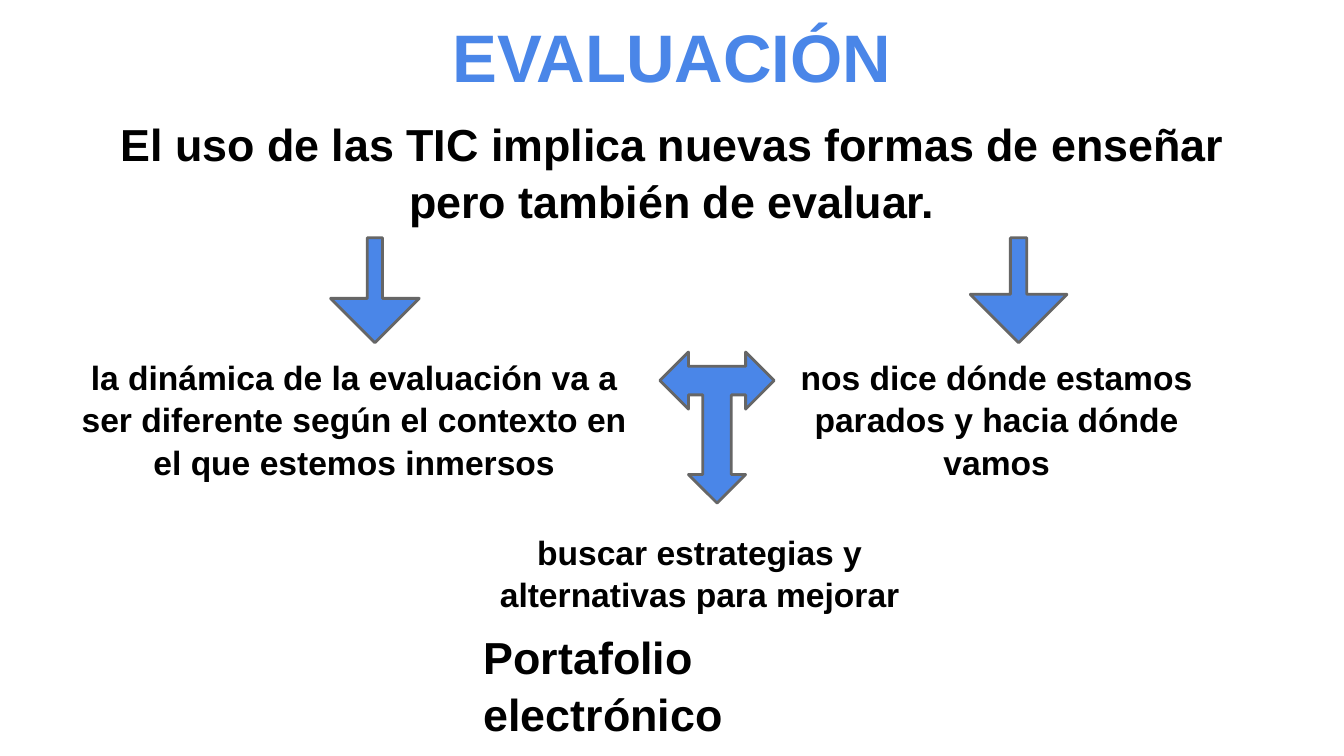
"""Build the EVALUACIÓN slide with its arrows and captions."""
from dataclasses import dataclass

from pptx import Presentation
from pptx.dml.color import RGBColor
from pptx.enum import shapes, text
from pptx.util import Pt

COLORS = {"blue": "4A86E8", "gray": "666666", "black": "000000", "white": "FFFFFF"}
FONT = "Arial"
Box = tuple[float, float, float, float]


@dataclass
class Caption:
    words: str
    box: Box
    size: float = 18
    align: text.PP_ALIGN = text.PP_ALIGN.CENTER
    inset: float = 7.2


@dataclass
class Arrow:
    kind: shapes.MSO_SHAPE
    box: Box
    adjustments: tuple[float, ...] = ()
    rotation: float = 0


CAPTIONS = [
    Caption("El uso de las TIC implica nuevas formas de enseñar pero también de evaluar.",
            (36, 54, 648, 72.7), size=24),
    Caption("la dinámica de la evaluación va a ser diferente según el contexto en el que "
            "estemos inmersos", (28.1, 182.9, 323.3, 80.6)),
    Caption("nos dice dónde estamos parados y hacia dónde vamos", (416.9, 182.9, 234, 92.9)),
    Caption("Portafolio electrónico", (252, 332.6, 241.2, 53.3), size=24,
            align=text.PP_ALIGN.LEFT, inset=3.6),
    Caption("buscar estrategias y alternativas para mejorar", (257.8, 276.5, 234, 55.4)),
]

ARROWS = [
    Arrow(shapes.MSO_SHAPE.DOWN_ARROW, (177.1, 127.4, 47.5, 56.2), (0.17, 0.5)),
    Arrow(shapes.MSO_SHAPE.DOWN_ARROW, (519.8, 127.4, 51.8, 56.2), (0.17, 0.5)),
    Arrow(shapes.MSO_SHAPE.LEFT_RIGHT_UP_ARROW, (353.5, 188.6, 61.2, 80.9),
          (0.25, 0.25, 0.25), 180),
]


def rgb(name: str) -> RGBColor:
    """Look up a palette colour."""
    return RGBColor.from_string(COLORS[name])


def write(sp, words: str, size: float, color: str, align: text.PP_ALIGN,
          anchor: text.MSO_ANCHOR, inset: float = 7.2, spacing: float = 1.05) -> None:
    """Fill a shape with one bold, wrapped paragraph."""
    tf = sp.text_frame
    tf.word_wrap = True
    tf.auto_size = text.MSO_AUTO_SIZE.NONE
    tf.vertical_anchor = anchor
    tf.margin_left = tf.margin_right = Pt(7.2)
    tf.margin_top = tf.margin_bottom = Pt(inset)
    p = tf.paragraphs[0]
    p.text = words
    p.alignment = align
    p.line_spacing = spacing
    p.font.name, p.font.size, p.font.bold = FONT, Pt(size), True
    p.font.color.rgb = rgb(color)


def add_title(s, words: str, box: Box) -> None:
    """Place and format the title placeholder."""
    sp = s.shapes.title
    sp.left, sp.top, sp.width, sp.height = map(Pt, box)
    write(sp, words, 36, "blue", text.PP_ALIGN.CENTER, text.MSO_ANCHOR.BOTTOM, spacing=1)


def add_caption(s, c: Caption) -> None:
    """Add a black text box."""
    sp = s.shapes.add_textbox(*map(Pt, c.box))
    write(sp, c.words, c.size, "black", c.align, text.MSO_ANCHOR.TOP, c.inset)


def add_arrow(s, a: Arrow) -> None:
    """Add a blue block arrow with a gray outline."""
    sp = s.shapes.add_shape(a.kind, *map(Pt, a.box))
    sp.shadow.inherit = False
    sp.rotation = a.rotation
    for i, value in enumerate(a.adjustments):
        sp.adjustments[i] = value
    sp.fill.solid()
    sp.fill.fore_color.rgb = rgb("blue")
    sp.line.color.rgb = rgb("gray")
    sp.line.width = Pt(1.5)


def main() -> None:
    """Assemble and save the slide."""
    prs = Presentation()
    prs.slide_width, prs.slide_height = Pt(720), Pt(405)
    s = prs.slides.add_slide(prs.slide_layouts[5])
    s.background.fill.solid()
    s.background.fill.fore_color.rgb = rgb("white")
    add_title(s, "EVALUACIÓN", (36, 2.2, 648, 56.2))
    for caption in CAPTIONS:
        add_caption(s, caption)
    for arrow in ARROWS:
        add_arrow(s, arrow)
    prs.save("out.pptx")


if __name__ == "__main__":
    main()
